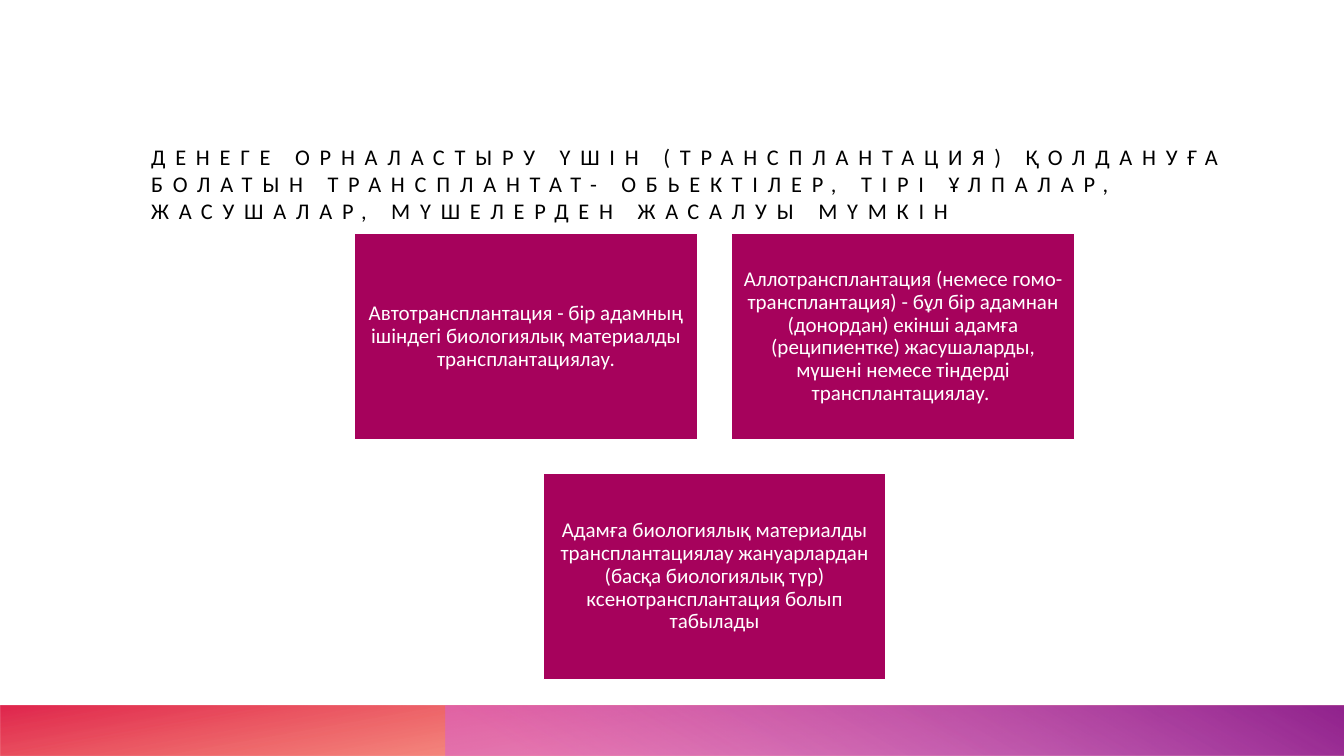
"""Build a slide on the three kinds of transplantation."""
from pptx import Presentation
from pptx.dml.color import RGBColor
from pptx.enum.shapes import MSO_SHAPE
from pptx.enum.text import MSO_ANCHOR, PP_ALIGN
from pptx.oxml import parse_xml
from pptx.oxml.ns import nsdecls
from pptx.util import Pt


def color(hex_string):
    return RGBColor.from_string(hex_string)


def set_text(shape, text, size, hex_string, anchor, alignment, inset):
    frame = shape.text_frame
    frame.word_wrap = True
    frame.vertical_anchor = anchor
    frame.margin_left = frame.margin_right = Pt(inset)
    frame.margin_top = frame.margin_bottom = Pt(inset)
    frame.text = text
    paragraph = frame.paragraphs[0]
    paragraph.alignment = alignment
    font = paragraph.runs[0].font
    font.name = "Calibri"
    font.size = Pt(size)
    font.color.rgb = color(hex_string)
    return paragraph


presentation = Presentation()
presentation.slide_width = Pt(960)
presentation.slide_height = Pt(540)
slide = presentation.slides.add_slide(presentation.slide_layouts[6])

footer_bars = [
    (0, 180, 100, [(14, "FE4A00", 28), (100, "DA002F", 85)]),
    (318, 0, 240, [(9, "D861D4", 55), (99, "92248E", 100)]),
]
for left, rotation, angle, stops in footer_bars:
    bar = slide.shapes.add_shape(
        MSO_SHAPE.RECTANGLE, Pt(left), Pt(504), Pt(960 - left), Pt(36))
    bar.shadow.inherit = False
    bar.line.fill.background()
    bar.rotation = rotation
    bar.fill.background()
    properties = bar._element.spPr
    properties.xfrm.set("flipH", "1")
    stop_xml = "".join(
        f'<a:gs pos="{position * 1000}"><a:srgbClr val="{hex_string}">'
        f'<a:alpha val="{opacity * 1000}"/></a:srgbClr></a:gs>'
        for position, hex_string, opacity in stops)
    gradient = parse_xml(
        f'<a:gradFill {nsdecls("a")} rotWithShape="1"><a:gsLst>{stop_xml}</a:gsLst>'
        f'<a:lin ang="{angle * 60000}" scaled="0"/></a:gradFill>')
    properties.replace(properties.find("{*}noFill"), gradient)

title = slide.shapes.add_textbox(Pt(108), Pt(36.7), Pt(806.4), Pt(123.1))
title_paragraph = set_text(
    title,
    "ДЕНЕГЕ ОРНАЛАСТЫРУ ҮШІН (ТРАНСПЛАНТАЦИЯ) ҚОЛДАНУҒА БОЛАТЫН "
    "ТРАНСПЛАНТАТ- ОБЬЕКТІЛЕР, ТІРІ ҰЛПАЛАР, ЖАСУШАЛАР, МҮШЕЛЕРДЕН ЖАСАЛУЫ МҮМКІН",
    16, "000000", MSO_ANCHOR.BOTTOM, PP_ALIGN.LEFT, 0)
title_paragraph.runs[0].font._element.set("spc", "700")

card_width, card_height, gap = 244.8, 146.9, 24.5
first_left, first_top = 253.4, 167
cards = [
    (0, 0, "Автотрансплантация - бір адамның ішіндегі биологиялық "
           "материалды трансплантациялау."),
    (1, 0, "Аллотрансплантация (немесе гомо-трансплантация) - бұл бір адамнан "
           "(донордан) екінші адамға (реципиентке) жасушаларды, мүшені немесе "
           "тіндерді трансплантациялау. "),
    (0.5, 1, "Адамға биологиялық материалды трансплантациялау жануарлардан "
             "(басқа биологиялық түр) ксенотрансплантация болып табылады"),
]
for column, row, text in cards:
    card = slide.shapes.add_shape(
        MSO_SHAPE.RECTANGLE,
        Pt(first_left + column * (card_width + gap)),
        Pt(first_top + row * (card_height + gap)),
        Pt(card_width), Pt(card_height))
    card.shadow.inherit = False
    card.fill.solid()
    card.fill.fore_color.rgb = color("A6025C")
    card.line.color.rgb = color("FFFFFF")
    card.line.width = Pt(1)
    card_paragraph = set_text(
        card, text, 15, "FFFFFF", MSO_ANCHOR.MIDDLE, PP_ALIGN.CENTER, 4.5)
    card_paragraph.line_spacing = 0.9

presentation.save("out.pptx")
